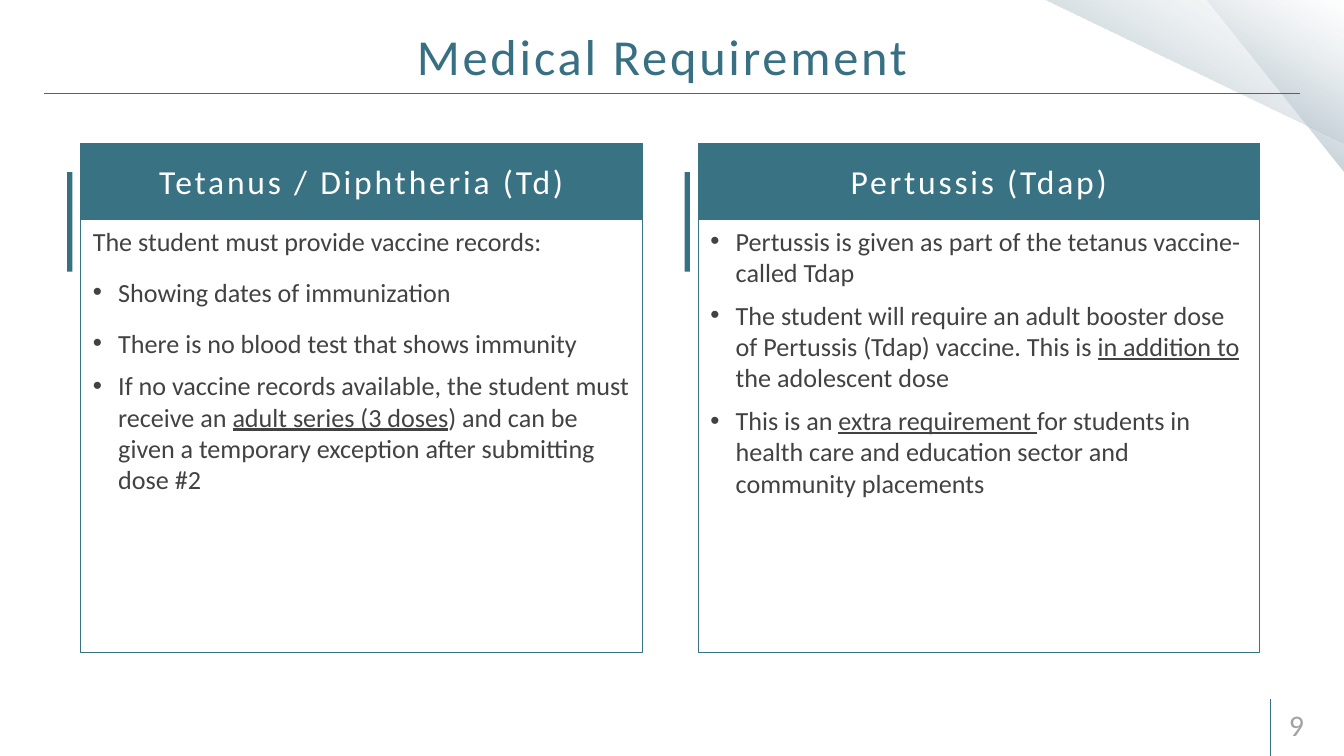
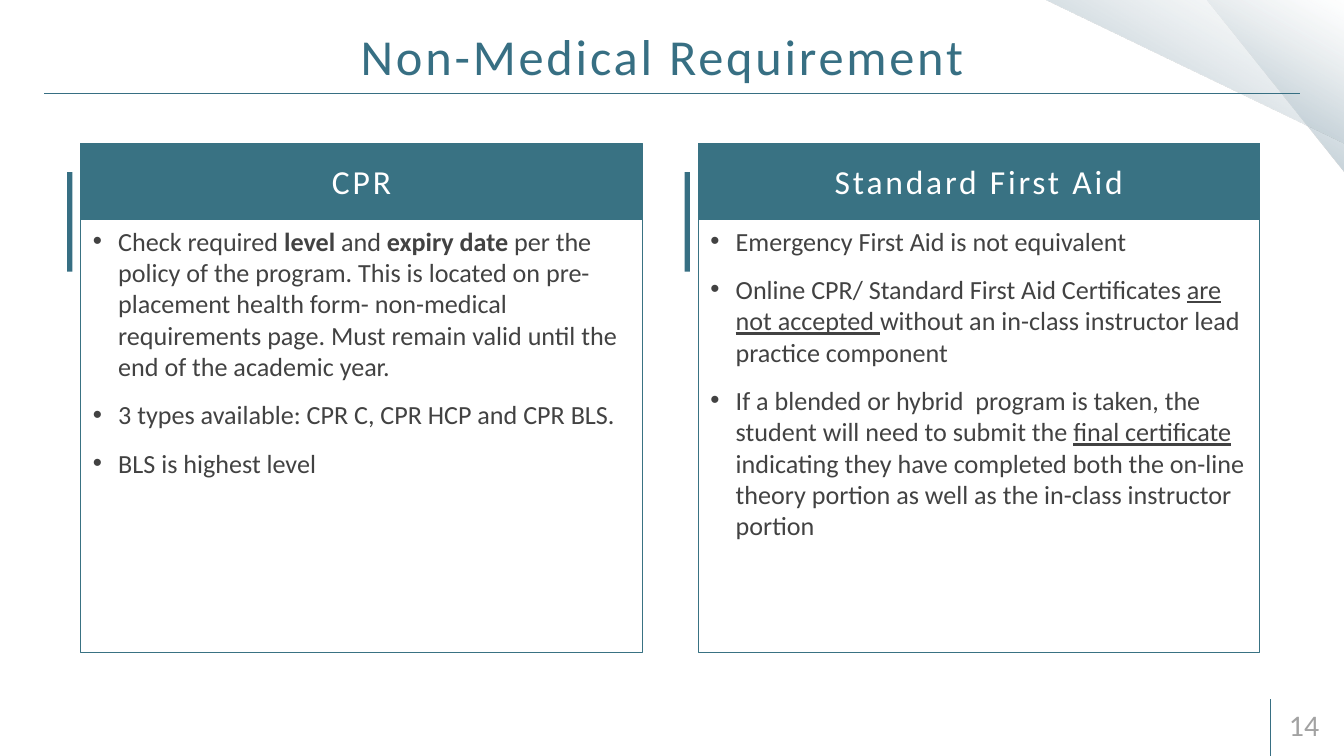
from lxml import etree
from pptx import Presentation
from pptx.dml.color import RGBColor
from pptx.enum.shapes import MSO_CONNECTOR, MSO_SHAPE
from pptx.enum.text import MSO_ANCHOR, PP_ALIGN
from pptx.oxml import parse_xml
from pptx.oxml.ns import nsdecls, qn
from pptx.util import Cm, Pt

RECT, WEDGE = MSO_SHAPE.RECTANGLE, MSO_SHAPE.RIGHT_TRIANGLE
LINE = MSO_CONNECTOR.STRAIGHT
TOP, MIDDLE = MSO_ANCHOR.TOP, MSO_ANCHOR.MIDDLE
LEFT, CENTER = PP_ALIGN.LEFT, PP_ALIGN.CENTER

WIDE, HIGH = 50.8, 28.58
FONT = "Calibri"
TEAL, PANEL, WHITE, INK, GREY = "376F83", "397283", "FFFFFF", "424242", "A2A2A2"
FADE = [(0, "9DB4C0", 100), (50, "B3C3CC", 44), (100, "E2E8EB", 0)]
WEDGES = [(45.62, 0, 5.18, 6.53), (39.47, 0, 11.33, 5.41)]
EDGE, STEP, SPAN = 3.05, 23.34, 21.23
INDENT = 0.96
FRAME = {"word_wrap": True, "margin_left": Cm(0.46), "margin_right": Cm(0.46),
         "margin_top": Cm(0.23), "margin_bottom": Cm(0.23)}
TITLE = {"size": 54, "color": TEAL, "track": 3}
HEAD = {"size": 36, "color": WHITE, "track": 3}
BODY = {"size": 28, "color": INK}
PAGE = {"size": 32, "color": GREY}


def color(code):
    return RGBColor.from_string(code)


def assign(item, values):
    for name, value in values.items():
        setattr(item, name, value)


def under(text):
    return text, {"underline": True}


def bold(text):
    return text, {"bold": True}


def point(*runs, after=0):
    """A bulleted paragraph; runs are strings or (text, font values) pairs."""
    return {"runs": runs, "after": after, "bullet": True}


def plain(*runs, after=0):
    return {"runs": runs, "after": after, "bullet": False}


class Deck:
    """Holds the presentation, its style and the current slide."""

    def __init__(self):
        self.prs = Presentation()
        assign(self.prs, {"slide_width": Cm(WIDE), "slide_height": Cm(HIGH)})
        self.shapes = None

    def slide(self, title, number, cards):
        layout = self.prs.slide_layouts[6]
        self.shapes = self.prs.slides.add_slide(layout).shapes
        for box in WEDGES:
            self.wedge(box)
        self.line(1.68, 3.53, 49.12, 3.53)
        self.line(48.03, HIGH, 48.03, 26.42)
        self.label((1.78, 0.53, 46.51, 3.12), title, TITLE, CENTER)
        self.label((48.26, 26.64, 2.51, 1.52), str(number), PAGE, LEFT)
        for index, (head, paras) in enumerate(cards):
            self.card(EDGE + index * STEP, head, paras)

    def shape(self, kind, box, fill=None, edge=None):
        shape = self.shapes.add_shape(kind, *map(Cm, box))
        shape.shadow.inherit = False
        if fill:
            shape.fill.solid()
            shape.fill.fore_color.rgb = color(fill)
        else:
            shape.fill.background()
        if edge:
            shape.line.color.rgb = color(edge)
            shape.line.width = Pt(0.75)
        else:
            shape.line.fill.background()
        return shape

    def wedge(self, box):
        """Corner triangle that fades to clear."""
        shape = self.shape(WEDGE, box)
        shape.rotation = 180
        stops = "".join(
            f'<a:gs pos="{pos * 1000}"><a:srgbClr val="{code}">'
            f'<a:alpha val="{alpha * 1000}"/></a:srgbClr></a:gs>'
            for pos, code, alpha in FADE)
        props = shape.element.spPr
        props.replace(props.find(qn("a:noFill")), parse_xml(
            f'<a:gradFill {nsdecls("a")} rotWithShape="1"><a:gsLst>{stops}</a:gsLst>'
            f'<a:lin ang="{120 * 60000}" scaled="0"/></a:gradFill>'))

    def line(self, *ends):
        line = self.shapes.add_connector(LINE, *map(Cm, ends))
        line.line.color.rgb = color(TEAL)
        line.line.width = Pt(1)
        etree.SubElement(line.element.spPr, qn("a:effectLst"))

    def label(self, box, text, style, align):
        shape = self.shapes.add_textbox(*map(Cm, box))
        self.text(shape, [plain(text)], style, align, MIDDLE)

    def card(self, left, head, paras):
        self.shape(RECT, (left - 0.51, 6.51, 0.2, 3.76), TEAL)
        band = self.shape(RECT, (left, 5.41, SPAN, 2.9), PANEL, PANEL)
        self.text(band, [plain(head)], HEAD, CENTER, MIDDLE)
        panel = self.shape(RECT, (left, 8.28, SPAN, 16.38), edge=PANEL)
        self.text(panel, paras, BODY, LEFT, TOP)

    def text(self, shape, paras, style, align, anchor):
        frame = shape.text_frame
        assign(frame, {**FRAME, "vertical_anchor": anchor})
        for index, para in enumerate(paras):
            item = frame.add_paragraph() if index else frame.paragraphs[0]
            if para["bullet"]:
                self.bullet(item)
            assign(item, {"alignment": align, "space_after": Pt(para["after"]),
                          "space_before": Pt(12 if index else 0)})
            for run in para["runs"]:
                words, extra = (run, {}) if isinstance(run, str) else run
                self.run(item, words, style, extra)

    def run(self, para, words, style, extra):
        run = para.add_run()
        run.text = words
        assign(run.font, {"name": FONT, "size": Pt(style["size"]), **extra})
        run.font.color.rgb = color(style["color"])
        if "track" in style:
            run.font._element.set("spc", str(style["track"] * 100))

    def bullet(self, para):
        props = para._p.get_or_add_pPr()
        props.set("marL", str(Cm(INDENT)))
        props.set("indent", str(-Cm(INDENT)))
        etree.SubElement(props, qn("a:buFont"), typeface="Arial")
        etree.SubElement(props, qn("a:buChar"), char="•")


def main():
    deck = Deck()
    deck.slide("Medical Requirement", 9, [
        ("Tetanus / Diphtheria (Td)", [
            plain("The student must provide vaccine records:", after=9),
            point("Showing dates of immunization", after=9),
            point("There is no blood test that shows immunity"),
            point("If no vaccine records available, the student must receive an ",
                  under("adult series (3 doses"),
                  ") and can be given a temporary exception after submitting dose #2"),
        ]),
        ("Pertussis (Tdap)", [
            point("Pertussis is given as part of the tetanus vaccine- called Tdap"),
            point("The student will require an adult booster dose of Pertussis (Tdap) "
                  "vaccine. This is ", under("in addition to "), "the adolescent dose"),
            point("This is an ", under("extra requirement "),
                  "for students in health care and education sector and "
                  "community placements"),
        ]),
    ])
    deck.slide("Non-Medical Requirement", 14, [
        ("CPR", [
            point("Check required ", bold("level"), " and ", bold("expiry date "),
                  "per the policy of the program. This is located on pre-placement "
                  "health form- non-medical requirements page. Must remain valid until "
                  "the end of the academic year.", after=6),
            point("3 types available: CPR C, CPR HCP and CPR BLS.", after=6),
            point("BLS is highest level", after=6),
        ]),
        ("Standard First Aid", [
            point("Emergency First Aid is not equivalent", after=6),
            point("Online CPR/ Standard First Aid Certificates ",
                  under("are not accepted "),
                  "without an in-class instructor lead practice component", after=6),
            point("If a blended or hybrid  program is taken, the student will need to "
                  "submit the ", under("final certificate"),
                  " indicating they have completed both the on-line theory portion "
                  "as well as the in-class instructor portion", after=6),
        ]),
    ])
    deck.prs.save("out.pptx")


if __name__ == "__main__":
    main()
